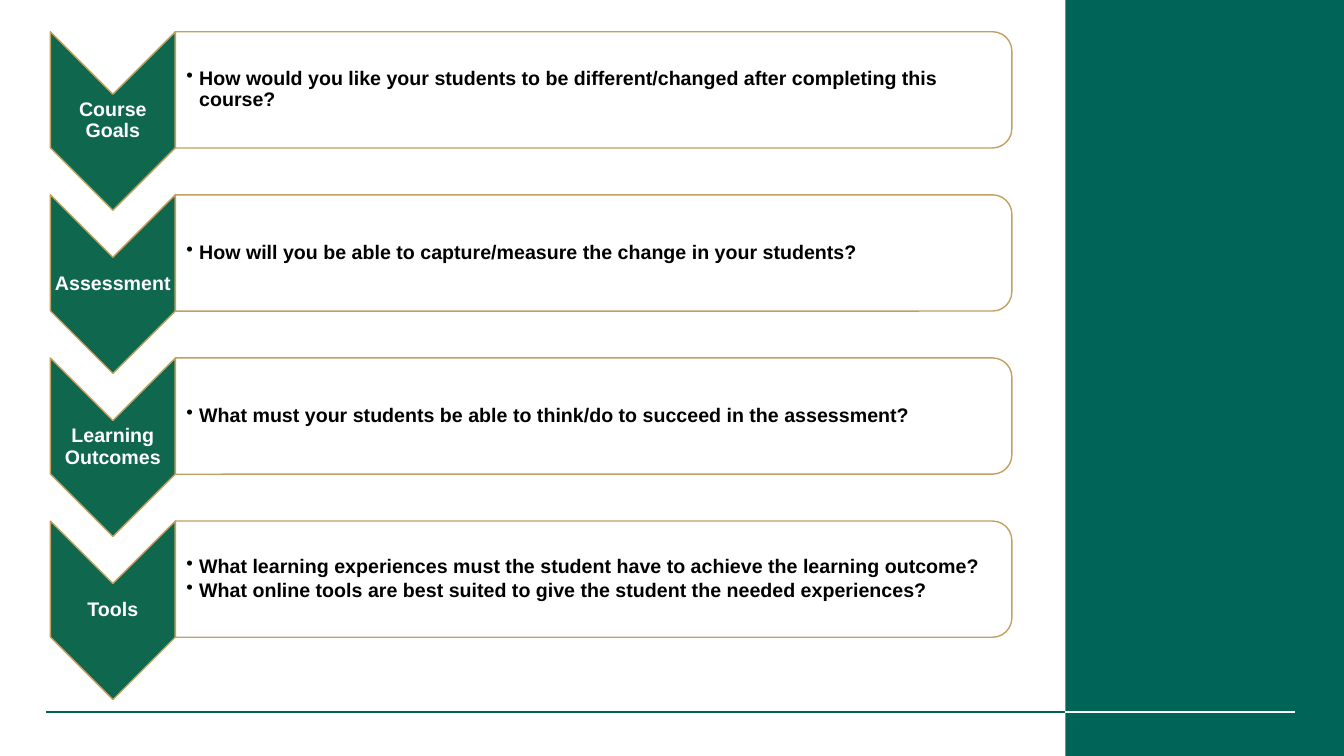
from lxml import etree
from pptx import Presentation
from pptx import util as u
from pptx.dml.color import RGBColor
from pptx.enum import shapes, text
from pptx.oxml import ns

BAND_GREEN = RGBColor(0x00, 0x65, 0x59)
CHEVRON_GREEN = RGBColor(0x0F, 0x67, 0x4E)
GOLD = RGBColor(0xC0, 0xA1, 0x60)
WHITE = RGBColor(0xFF, 0xFF, 0xFF)
BLACK = RGBColor(0x00, 0x00, 0x00)

SLIDE_WIDTH, SLIDE_HEIGHT = 33.87, 19.05
BAND_LEFT = 26.85
CHEVRON_WIDTH, CHEVRON_HEIGHT = 3.15, 4.5
PANEL_HEIGHT = 2.93
STEP_PITCH = 4.11

STEPS = [
    ("Course Goals", ["How would you like your students to be different/changed "
                      "after completing this course?"]),
    ("Assessment", ["How will you be able to capture/measure the change in your students?"]),
    ("Learning Outcomes", ["What must your students be able to think/do to succeed "
                           "in the assessment?"]),
    ("Tools", ["What learning experiences must the student have to achieve "
               "the learning outcome?",
               "What online tools are best suited to give the student "
               "the needed experiences?"]),
]


def add_turned_shape(page, kind, left, top, width, height, fill):
    """Place a shape turned by 90 degrees so that it covers the given box."""
    shape = page.shapes.add_shape(
        kind, u.Cm(left + (width - height) / 2), u.Cm(top + (height - width) / 2),
        u.Cm(height), u.Cm(width))
    shape.rotation = 90
    shape.shadow.inherit = False
    shape.fill.solid()
    shape.fill.fore_color.rgb = fill
    shape.line.color.rgb = GOLD
    shape.line.width = u.Pt(1)
    return shape


def add_text(page, left, top, width, height, lines, color, space_after,
             left_inset=0.03, bulleted=False):
    box = page.shapes.add_textbox(u.Cm(left), u.Cm(top), u.Cm(width), u.Cm(height))
    frame = box.text_frame
    frame.word_wrap = True
    frame.vertical_anchor = text.MSO_ANCHOR.MIDDLE
    frame.margin_left = u.Cm(left_inset)
    frame.margin_top = frame.margin_right = frame.margin_bottom = u.Cm(0.03)
    frame.text = "\n".join(lines)
    for para in frame.paragraphs:
        if bulleted:
            properties = para._p.get_or_add_pPr()
            properties.set("marL", str(u.Cm(0.32)))
            properties.set("indent", str(-u.Cm(0.32)))
            etree.SubElement(properties, ns.qn("a:buChar")).set("char", "•")
        para.alignment = text.PP_ALIGN.LEFT if bulleted else text.PP_ALIGN.CENTER
        para.line_spacing = 0.9
        para.space_after = u.Pt(space_after)
        para.font.name = "Arial"
        para.font.size = u.Pt(14)
        para.font.bold = True
        para.font.color.rgb = color


def add_rule(page, start, end, top, color):
    rule = page.shapes.add_connector(
        shapes.MSO_CONNECTOR.STRAIGHT, u.Cm(start), u.Cm(top), u.Cm(end), u.Cm(top))
    rule.line.color.rgb = color
    rule.line.width = u.Pt(1.5)
    etree.SubElement(rule._element.spPr, ns.qn("a:effectLst"))


def add_backdrop(page, left, top, width, height):
    # Side band
    band = page.shapes.add_shape(
        shapes.MSO_SHAPE.RECTANGLE, u.Cm(left), u.Cm(top), u.Cm(width), u.Cm(height))
    band.shadow.inherit = False
    band.fill.solid()
    band.fill.fore_color.rgb = BAND_GREEN
    band.line.fill.background()

    # Footer rules
    rule_top = top + height - 1.12
    add_rule(page, 1.17, left + 1.78, rule_top, BAND_GREEN)
    add_rule(page, left, left + 5.79, rule_top, WHITE)


def add_step(page, left, top, width, label, questions):
    # Chevron with its label
    add_turned_shape(page, shapes.MSO_SHAPE.CHEVRON, left, top,
                     CHEVRON_WIDTH, CHEVRON_HEIGHT, CHEVRON_GREEN)
    add_text(page, left, top + CHEVRON_WIDTH / 2, CHEVRON_WIDTH,
             CHEVRON_HEIGHT - CHEVRON_WIDTH, [label], WHITE, 4.9)

    # Panel with its questions
    panel_left = left + CHEVRON_WIDTH
    panel_width = width - CHEVRON_WIDTH
    panel = add_turned_shape(page, shapes.MSO_SHAPE.ROUND_2_SAME_RECTANGLE, panel_left, top,
                             panel_width, PANEL_HEIGHT, WHITE)
    fill_color = panel._element.spPr.find(ns.qn("a:solidFill"))[0]
    etree.SubElement(fill_color, ns.qn("a:alpha")).set("val", "90000")
    add_text(page, panel_left, top + 0.14, panel_width - 0.14, PANEL_HEIGHT - 0.28,
             questions, BLACK, 2.1, left_inset=0.28, bulleted=True)


def main():
    deck = Presentation()
    deck.slide_width, deck.slide_height = u.Cm(SLIDE_WIDTH), u.Cm(SLIDE_HEIGHT)
    page = deck.slides.add_slide(deck.slide_layouts[6])
    add_backdrop(page, BAND_LEFT, 0, SLIDE_WIDTH - BAND_LEFT, SLIDE_HEIGHT)
    for row, (label, questions) in enumerate(STEPS):
        add_step(page, 1.27, 0.8 + row * STEP_PITCH, 24.23, label, questions)
    deck.save("out.pptx")


if __name__ == "__main__":
    main()
